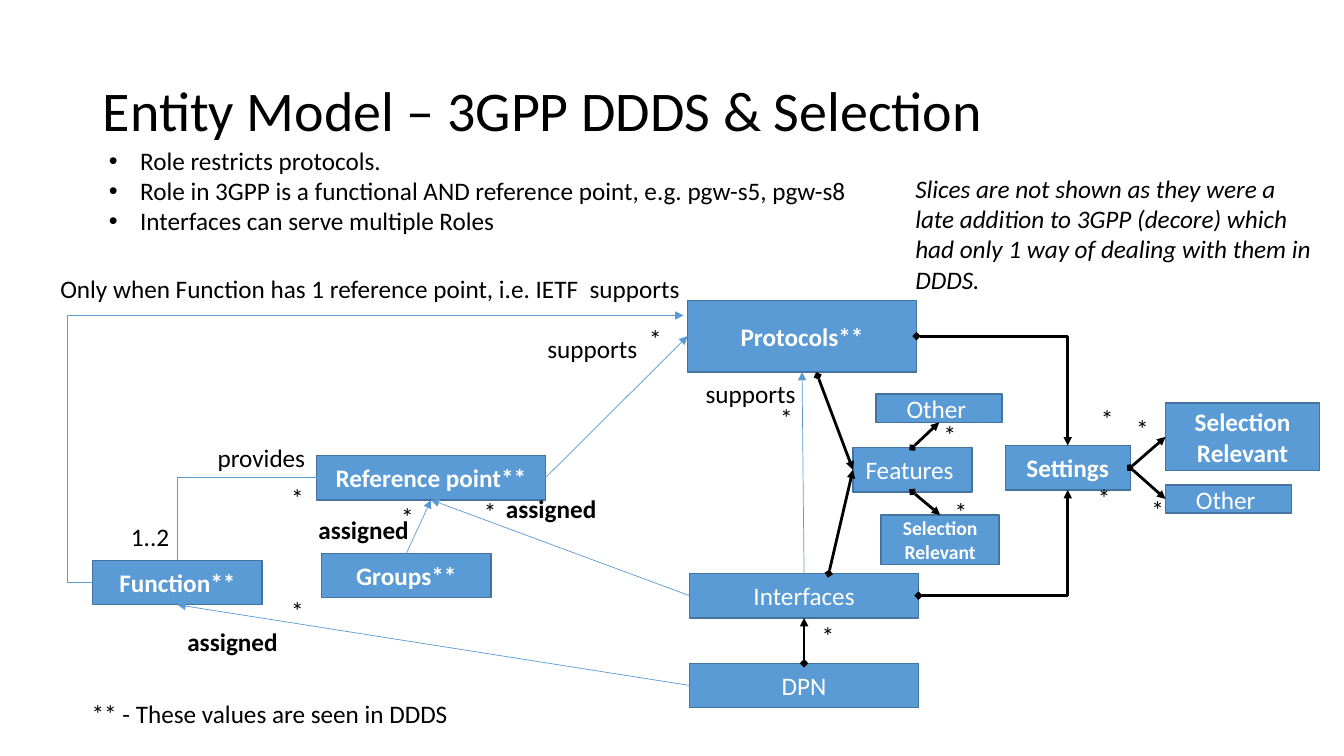
from dataclasses import dataclass

from lxml import etree
from pptx import Presentation
from pptx import util as u
from pptx.dml.color import RGBColor
from pptx.enum import shapes, text
from pptx.oxml.ns import qn


@dataclass(frozen=True)
class Theme:
    font: str = "Calibri"
    ink: str = "000000"
    paper: str = "FFFFFF"
    box: str = "5B9BD5"
    edge: str = "43739E"
    title_size: int = 40
    size: int = 18
    small: int = 14
    thin: float = 0.5
    thick: float = 2


class EntitySlide:
    def __init__(self, s, theme):
        self.s = s
        self.theme = theme

    def style(self, tf, size=None, color=None, bold=False, italic=False):
        for p in tf.paragraphs:
            for r in p.runs:
                r.font.name = self.theme.font
                r.font.size = u.Pt(size or self.theme.size)
                r.font.bold = bold
                r.font.italic = italic
                r.font.color.rgb = RGBColor.from_string(color or self.theme.ink)

    def place(self, sp, x, y, w, h):
        sp.left, sp.top, sp.width, sp.height = map(u.Inches, (x, y, w, h))

    def title(self, words, *area):
        sp = self.s.shapes.title
        self.place(sp, *area)
        tf = sp.text_frame
        tf.text = words
        tf.vertical_anchor = text.MSO_ANCHOR.MIDDLE
        tf.auto_size = text.MSO_AUTO_SIZE.NONE
        tf.paragraphs[0].alignment = text.PP_ALIGN.LEFT
        tf.paragraphs[0].line_spacing = 0.9
        self.style(tf, self.theme.title_size)

    def bullets(self, items, *area):
        sp = self.s.placeholders[1]
        self.place(sp, *area)
        tf = sp.text_frame
        tf.text = "\n".join(items)
        tf.word_wrap = False
        tf.auto_size = text.MSO_AUTO_SIZE.NONE
        for p in tf.paragraphs:
            p.space_before = u.Pt(0)
            pPr = p._p.get_or_add_pPr()
            pPr.set("marL", str(u.Inches(0.31)))
            pPr.set("indent", str(-u.Inches(0.31)))
            etree.SubElement(pPr, qn("a:buFont")).set("typeface", "Arial")
            etree.SubElement(pPr, qn("a:buChar")).set("char", "•")
        self.style(tf)

    def box(self, words, x, y, w, h=0.44, bold=False, size=None):
        sp = self.s.shapes.add_shape(shapes.MSO_SHAPE.RECTANGLE, *map(u.Inches, (x, y, w, h)))
        sp.shadow.inherit = False
        sp.fill.solid()
        sp.fill.fore_color.rgb = RGBColor.from_string(self.theme.box)
        sp.line.color.rgb = RGBColor.from_string(self.theme.edge)
        sp.line.width = u.Pt(1)
        tf = sp.text_frame
        tf.text = words
        tf.word_wrap = True
        tf.vertical_anchor = text.MSO_ANCHOR.MIDDLE
        tf.paragraphs[0].alignment = text.PP_ALIGN.CENTER
        self.style(tf, size, self.theme.paper, bold)
        return sp

    def label(self, words, x, y, w, h=0.4, wrap=False, bold=False, italic=False):
        sp = self.s.shapes.add_textbox(*map(u.Inches, (x, y, w, h)))
        tf = sp.text_frame
        tf.text = words
        tf.word_wrap = wrap
        tf.auto_size = text.MSO_AUTO_SIZE.SHAPE_TO_FIT_TEXT
        self.style(tf, bold=bold, italic=italic)

    def link(self, start, end, owned=False, arrow=True, bend=None, adjust=None):
        kind = shapes.MSO_CONNECTOR.ELBOW if bend else shapes.MSO_CONNECTOR.STRAIGHT
        ends = [(0, 0) if hasattr(e[0], "shape_id") else e for e in (start, end)]
        c = self.s.shapes.add_connector(kind, *map(u.Inches, ends[0] + ends[1]))
        for point, join in ((start, c.begin_connect), (end, c.end_connect)):
            if hasattr(point[0], "shape_id"):
                join(*point)
        c.line.color.rgb = RGBColor.from_string(self.theme.ink if owned else self.theme.box)
        c.line.width = u.Pt(self.theme.thick if owned else self.theme.thin)
        ln = c.line._get_or_add_ln()
        if owned:
            etree.SubElement(ln, qn("a:headEnd")).set("type", "diamond")
        if arrow:
            etree.SubElement(ln, qn("a:tailEnd")).set("type", "triangle")
        spPr = c._element.spPr
        etree.SubElement(spPr, qn("a:effectLst"))
        if bend:
            geom = spPr.find(qn("a:prstGeom"))
            geom.set("prst", bend)
            if adjust is not None:
                gd = etree.SubElement(geom.find(qn("a:avLst")), qn("a:gd"))
                gd.set("name", "adj1")
                gd.set("fmla", f"val {adjust}")


TOP, LEFT, BOTTOM, RIGHT = range(4)


def main():
    prs = Presentation()
    prs.slide_width, prs.slide_height = u.Inches(13.33), u.Inches(7.5)
    d = EntitySlide(prs.slides.add_slide(prs.slide_layouts[1]), Theme())

    d.title("Entity Model – 3GPP DDDS & Selection", 0.92, 0.4, 9.91, 1.45)
    d.bullets([
        "Role restricts protocols.",
        "Role in 3GPP is a functional AND reference point, e.g. pgw-s5, pgw-s8",
        "Interfaces can serve multiple Roles",
    ], 0.98, 1.39, 7.62, 1.01)

    reference = d.box("Reference point**", 3.14, 4.52, 2.27, bold=True)
    function = d.box("Function**", 0.92, 5.56, 1.68, bold=True)
    groups = d.box("Groups**", 3.19, 5.49, 1.68, bold=True)
    protocols = d.box("Protocols**", 6.82, 2.98, 2.27, 0.71, bold=True)
    interfaces = d.box("Interfaces", 6.84, 5.69, 2.27)
    dpn = d.box("DPN", 6.84, 6.58, 2.27)
    settings = d.box("Settings", 9.97, 4.42, 1.24, bold=True)
    settings_relevant = d.box("Selection Relevant", 11.56, 4, 1.53, 0.67, bold=True)
    settings_other = d.box("Other ", 11.56, 4.81, 1.25, 0.28)
    features = d.box("Features ", 8.46, 4.44, 1.18)
    features_relevant = d.box("Selection Relevant", 8.74, 5.11, 1.17, 0.49, True, d.theme.small)
    features_other = d.box("Other ", 8.69, 3.91, 1.25, 0.28)

    for start, end in (
        ((reference, RIGHT), (protocols, LEFT)),
        ((interfaces, TOP), (protocols, BOTTOM)),
        ((dpn, LEFT), (function, BOTTOM)),
        ((interfaces, LEFT), (reference, BOTTOM)),
        ((groups, TOP), (reference, BOTTOM)),
    ):
        d.link(start, end)
    for start, end in (
        ((settings, RIGHT), (settings_relevant, LEFT)),
        ((settings, RIGHT), (settings_other, LEFT)),
        ((dpn, TOP), (interfaces, BOTTOM)),
        ((features, TOP), (features_other, BOTTOM)),
        ((features, BOTTOM), (features_relevant, TOP)),
        ((8.11, 3.73), (features, LEFT)),
        ((8.22, 5.69), (features, LEFT)),
    ):
        d.link(start, end, owned=True)
    corner = "bentConnector2"
    d.link((reference, LEFT), (function, TOP), arrow=False, bend=corner)
    d.link((protocols, RIGHT), (settings, TOP), owned=True, bend=corner)
    d.link((interfaces, RIGHT), (settings, BOTTOM), owned=True, bend=corner)
    d.link((function, LEFT), (6.78, 3.13), bend="bentConnector3", adjust=-4300)

    for x, y in ((6.9, 3.7), (5.75, 2.66), (5.33, 3.26)):
        d.label("supports", x, y, 1.1)
    for x, y in ((4.92, 4.84), (1.76, 6.16), (3.06, 5.05)):
        d.label("assigned", x, y, 1.1, bold=True)
    for x, y in ((7.64, 3.94), (2.79, 4.74), (8.05, 6.11), (4.7, 4.87),
                 (2.79, 5.86), (3.88, 4.92), (6.34, 3.16)):
        d.label("*", x, y, 0.33)
    for x, y, w in ((11.17, 4.05, 0.39), (11.32, 4.85, 0.22), (10.79, 4.74, 0.22),
                    (10.82, 3.95, 0.22), (9.37, 4.87, 0.37), (9.26, 4.11, 0.34)):
        d.label("*", x, y, w, wrap=True)
    d.label("provides", 2.06, 4.34, 1.08)
    d.label("1..2", 1.2, 5.12, 0.58)
    d.label("Only when Function has 1 reference point, i.e. IETF", 0.5, 2.66, 5.46)
    d.label("** - These values are seen in DDDS", 0.81, 6.88, 3.78)
    d.label("Slices are not shown as they were a late addition to 3GPP (decore) which "
            "had only 1 way of dealing with them in DDDS.",
            8.98, 1.67, 4.14, 1.31, wrap=True, italic=True)

    prs.save("out.pptx")


if __name__ == "__main__":
    main()
